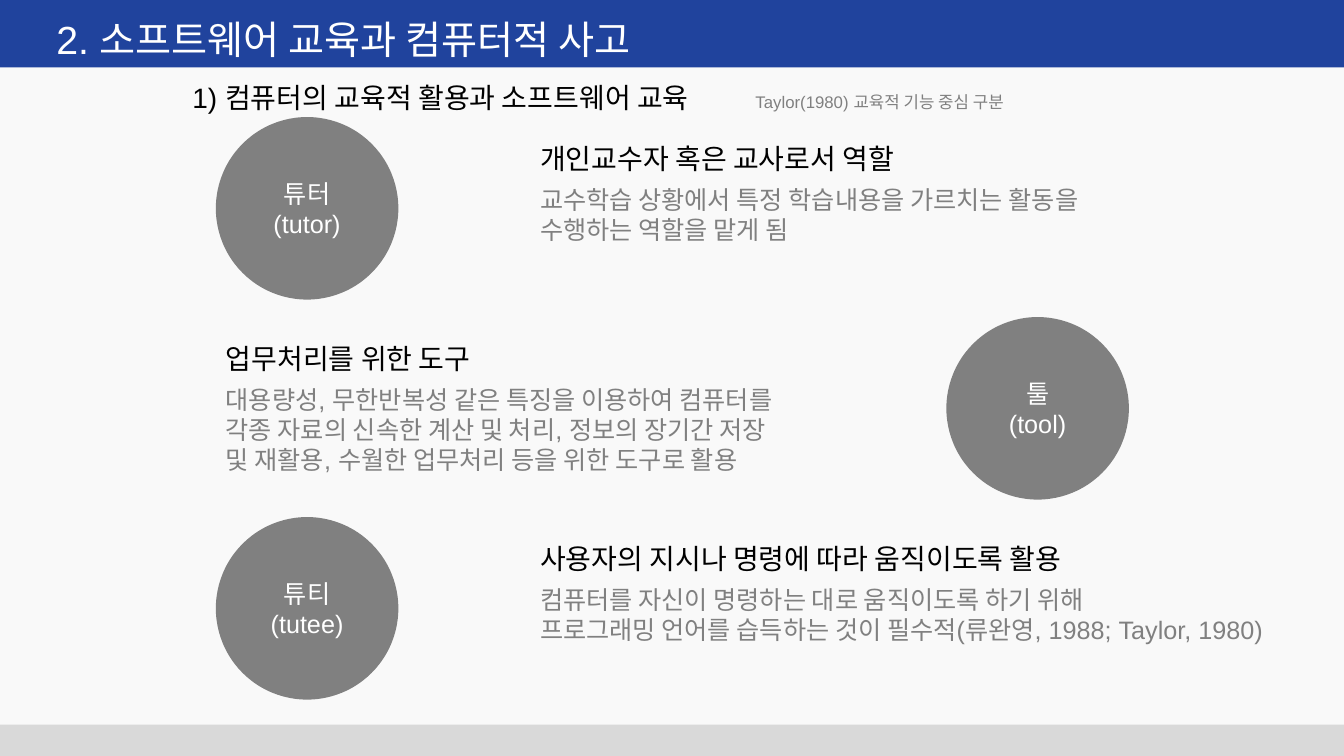
from pptx import Presentation
from pptx.dml.color import RGBColor
from pptx.enum.shapes import MSO_SHAPE as Shape
from pptx.enum.text import MSO_ANCHOR as Anchor, MSO_AUTO_SIZE as Fit, PP_ALIGN as Align
from pptx.util import Cm, Pt

BLUE = RGBColor(0x20, 0x43, 0x9D)
GRAY = RGBColor(0x80, 0x80, 0x80)
SILVER = RGBColor(0xD9, 0xD9, 0xD9)
PAPER = RGBColor(0xF9, 0xF9, 0xF9)
WHITE = RGBColor(0xFF, 0xFF, 0xFF)
BLACK = RGBColor(0, 0, 0)
FONT = "Arial"

TITLE = "2. 소프트웨어 교육과 컴퓨터적 사고"
TOPIC = "1) 컴퓨터의 교육적 활용과 소프트웨어 교육"
SOURCE = "Taylor(1980) 교육적 기능 중심 구분"
ROLES = [
    {"name": ["튜터", "(tutor)"], "disc": 5.44, "left": 13.36,
     "head": "개인교수자 혹은 교사로서 역할", "head_w": 10.36,
     "body": ["교수학습 상황에서 특정 학습내용을 가르치는 활동을",
              "수행하는 역할을 맡게 됨"], "body_w": 15.52},
    {"name": ["툴", "(tool)"], "disc": 23.85, "left": 5.44,
     "head": "업무처리를 위한 도구", "head_w": 7.32,
     "body": ["대용량성, 무한반복성 같은 특징을 이용하여 컴퓨터를",
              "각종 자료의 신속한 계산 및 처리, 정보의 장기간 저장",
              "및 재활용, 수월한 업무처리 등을 위한 도구로 활용"], "body_w": 15.7},
    {"name": ["튜티", "(tutee)"], "disc": 5.44, "left": 13.36,
     "head": "사용자의 지시나 명령에 따라 움직이도록 활용", "head_w": 15.04,
     "body": ["컴퓨터를 자신이 명령하는 대로 움직이도록 하기 위해",
              "프로그래밍 언어를 습득하는 것이 필수적(류완영, 1988; Taylor, 1980)"],
     "body_w": 20.17},
]

WIDE, HIGH = 33.87, 19.05
BAND, FOOT = 1.7, 0.79
DISC, TOP, STEP = 4.6, 2.95, 5.04
HEAD_DY, BODY_DY = 0.48, 1.57


def write(frame, lines, size, color, align=Align.LEFT):
    for i, line in enumerate(lines):
        para = frame.add_paragraph() if i else frame.paragraphs[0]
        para.alignment = align
        run = para.add_run()
        run.text = line
        run.font.name = FONT
        run.font.size = Pt(size)
        run.font.color.rgb = color


def add_text(slide, x, y, w, h, lines, size, color, align=Align.LEFT):
    frame = slide.shapes.add_textbox(Cm(x), Cm(y), Cm(w), Cm(h)).text_frame
    frame.word_wrap = False
    frame.auto_size = Fit.SHAPE_TO_FIT_TEXT
    write(frame, lines, size, color, align)


def add_fill(slide, kind, x, y, w, h, color):
    shape = slide.shapes.add_shape(kind, Cm(x), Cm(y), Cm(w), Cm(h))
    shape.shadow.inherit = False
    shape.fill.solid()
    shape.fill.fore_color.rgb = color
    shape.line.fill.background()
    return shape


def add_title(slide):
    title = slide.shapes.title
    title.left, title.top, title.width, title.height = Cm(0), Cm(0), Cm(WIDE), Cm(BAND)
    title.fill.solid()
    title.fill.fore_color.rgb = BLUE
    frame = title.text_frame
    frame.auto_size = Fit.NONE
    frame.vertical_anchor = Anchor.MIDDLE
    frame.margin_left, frame.margin_top, frame.margin_bottom = Cm(1.42), Cm(0.25), Cm(0)
    write(frame, [TITLE], 28, WHITE)


def add_role(slide, role, y):
    disc = add_fill(slide, Shape.OVAL, role["disc"], y, DISC, DISC, GRAY)
    disc.text_frame.vertical_anchor = Anchor.MIDDLE
    write(disc.text_frame, role["name"], 18, WHITE, Align.CENTER)
    left, body = role["left"], role["body"]
    add_text(slide, left, y + HEAD_DY, role["head_w"], 1.11, [role["head"]], 20, BLACK)
    add_text(slide, left, y + BODY_DY, role["body_w"], 0.25 + 0.77 * len(body), body, 18, GRAY)


def main():
    deck = Presentation()
    deck.slide_width, deck.slide_height = Cm(WIDE), Cm(HIGH)
    slide = deck.slides.add_slide(deck.slide_layouts[5])
    slide.background.fill.solid()
    slide.background.fill.fore_color.rgb = PAPER
    add_title(slide)
    add_fill(slide, Shape.RECTANGLE, 0, HIGH - FOOT, WIDE, FOOT, SILVER)
    add_text(slide, 4.6, 1.9, 14.22, 1.11, [TOPIC], 20, BLACK)
    add_text(slide, 18.54, 2.18, 7.26, 0.77, [SOURCE], 12, GRAY, Align.CENTER)
    for i, role in enumerate(ROLES):
        add_role(slide, role, TOP + i * STEP)
    deck.save("out.pptx")


if __name__ == "__main__":
    main()
